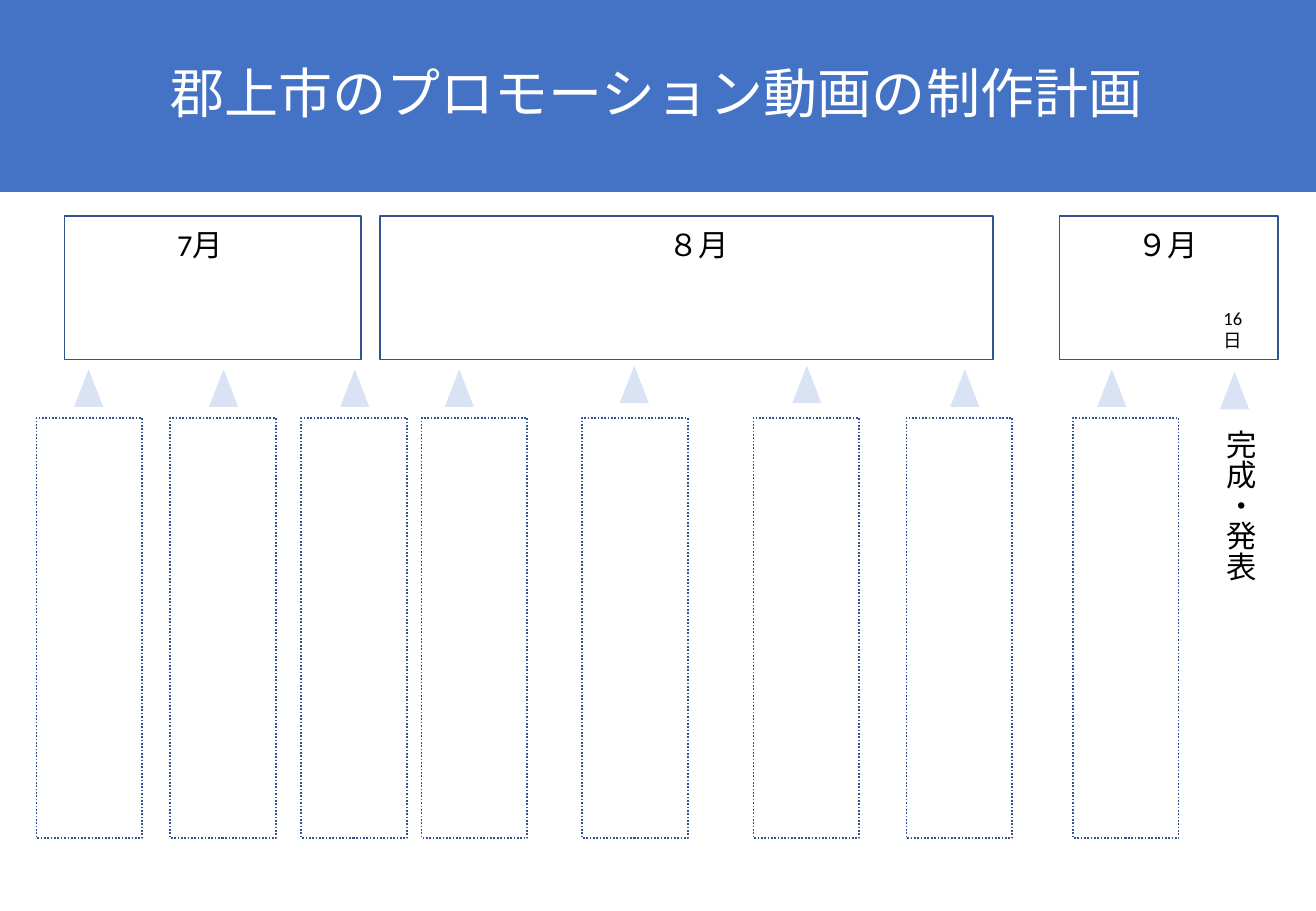
import pptx
import pptx.dml.color
import pptx.enum.dml
import pptx.enum.lang
import pptx.enum.shapes
import pptx.enum.text
import pptx.oxml
import pptx.oxml.ns
import pptx.util
from pptx.util import Inches

BLUE = pptx.dml.color.RGBColor(0x44, 0x72, 0xC4)
NAVY = pptx.dml.color.RGBColor(0x32, 0x54, 0x91)
PALE = pptx.dml.color.RGBColor(0xDA, 0xE3, 0xF3)
WHITE = pptx.dml.color.RGBColor(0xFF, 0xFF, 0xFF)
BLACK = pptx.dml.color.RGBColor(0, 0, 0)
JP_FONT = "Noto Sans CJK JP"
SHAPE = pptx.enum.shapes.MSO_SHAPE


def add_plain_shape(kind, x, y, w, h, fill=None, dash=None):
    """Add a filled shape without outline, or an outlined shape without fill."""
    sp = slide.shapes.add_shape(kind, Inches(x), Inches(y), Inches(w), Inches(h))
    sp.shadow.inherit = False
    if fill is not None:
        sp.fill.solid()
        sp.fill.fore_color.rgb = fill
        sp.line.fill.background()
    else:
        sp.fill.background()
        sp.line.color.rgb = NAVY
        sp.line.width = pptx.util.Pt(1)
        if dash is not None:
            sp.line.dash_style = dash


def format_runs(tf, size, font, color):
    """Format all runs, with the Japanese font for East Asian characters."""
    for p in tf.paragraphs:
        for r in p.runs:
            r.font.size = pptx.util.Pt(size)
            r.font.name = font
            r.font.color.rgb = color
            r.font.language_id = pptx.enum.lang.MSO_LANGUAGE_ID.JAPANESE
            ea = pptx.oxml.parse_xml(
                f'<a:ea {pptx.oxml.ns.nsdecls("a")} typeface="{JP_FONT}"/>')
            r.font._element.find(pptx.oxml.ns.qn("a:latin")).addnext(ea)


prs = pptx.Presentation()
prs.slide_width = Inches(10.83)
prs.slide_height = Inches(7.5)
slide = prs.slides.add_slide(prs.slide_layouts[5])

# Title band
title = slide.shapes.title
title.left, title.top = Inches(-0.02), Inches(0)
title.width, title.height = Inches(10.85), Inches(1.58)
title.fill.solid()
title.fill.fore_color.rgb = BLUE
tf = title.text_frame
tf.text = "郡上市のプロモーション動画の制作計画"
tf.vertical_anchor = pptx.enum.text.MSO_ANCHOR.MIDDLE
tf.paragraphs[0].alignment = pptx.enum.text.PP_ALIGN.CENTER
tf.paragraphs[0].line_spacing = 0.9
format_runs(tf, 32, JP_FONT, WHITE)

# Month frames
for x, width in [(0.53, 2.44), (3.13, 5.04), (8.72, 1.8)]:
    add_plain_shape(SHAPE.RECTANGLE, x, 1.78, width, 1.18)

# Markers: left, top
for x, y in [(0.61, 3.04), (1.72, 3.04), (2.8, 3.04), (3.66, 3.04), (5.1, 3.01),
             (6.52, 3.01), (7.82, 3.04), (9.03, 3.04), (10.04, 3.06)]:
    add_plain_shape(SHAPE.ISOSCELES_TRIANGLE, x, y, 0.24, 0.31, fill=PALE)

# Empty task boxes
for x in [0.3, 1.4, 2.48, 3.47, 4.79, 6.2, 7.46, 8.83]:
    add_plain_shape(SHAPE.RECTANGLE, x, 3.44, 0.87, 3.46,
                    dash=pptx.enum.dml.MSO_LINE.ROUND_DOT)

# Labels: text, left, top, width, height, size, text direction
labels = [
    ("7月", 1.36, 1.81, 0.71, 0.4, 18, "horz"),
    ("８月", 5.4, 1.81, 0.71, 0.4, 18, "horz"),
    ("９月", 9.26, 1.81, 0.71, 0.4, 18, "horz"),
    ("16\n日", 9.97, 2.48, 0.57, 0.47, 11, "horz"),
    ("完成・発表", 9.91, 3.44, 0.5, 1.81, 18, "eaVert"),
]
for text, x, y, w, h, size, direction in labels:
    sp = slide.shapes.add_textbox(Inches(x), Inches(y), Inches(w), Inches(h))
    tf = sp.text_frame
    tf.text = text
    tf.word_wrap = True
    tf.auto_size = pptx.enum.text.MSO_AUTO_SIZE.SHAPE_TO_FIT_TEXT
    tf._txBody.bodyPr.set("vert", direction)
    format_runs(tf, size, "Calibri", BLACK)

prs.save("out.pptx")
